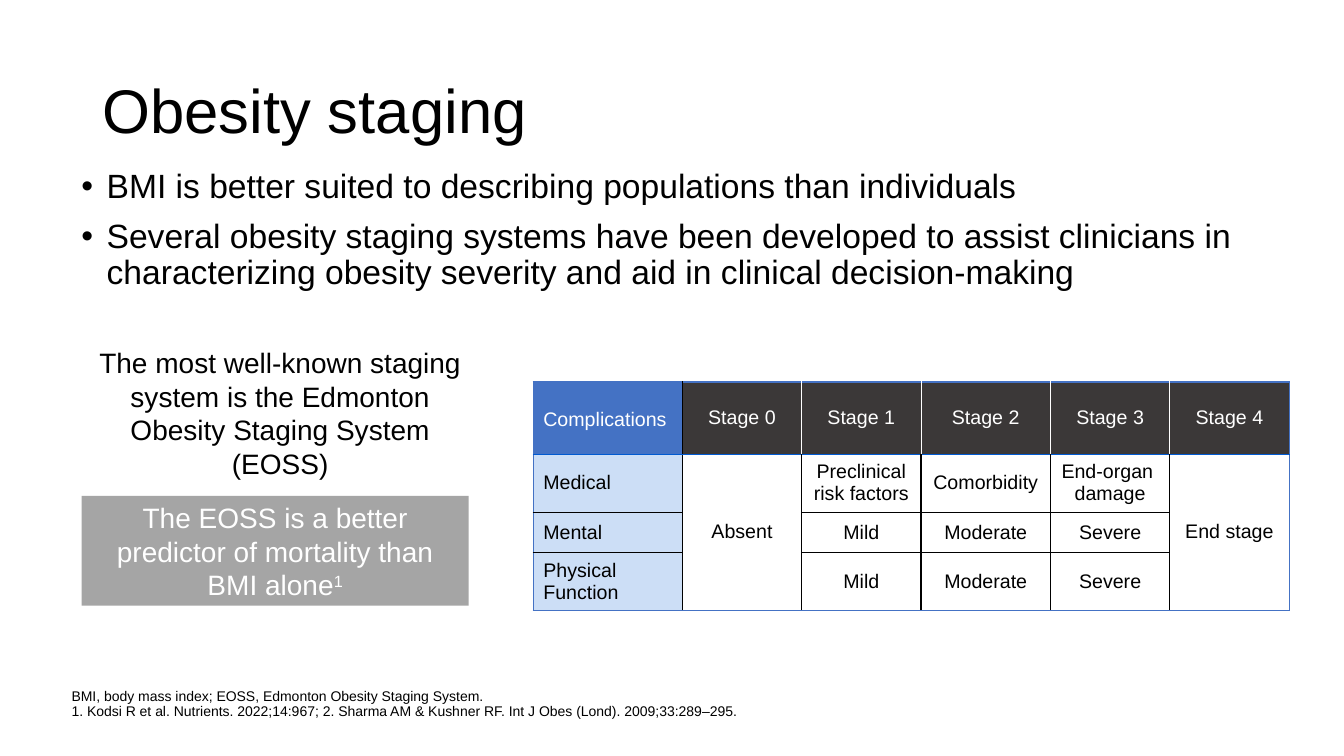
from pptx import Presentation
from pptx.dml.color import RGBColor
from pptx.enum import shapes, text
from pptx.oxml import ns, xmlchemy as xml
from pptx.util import Pt

HUES = {
    "black": "000000", "white": "FFFFFF", "gray": "A5A5A5", "dark": "3B3838",
    "blue": "4472C4", "deep": "005AD2", "pale": "CCDEF6",
}
LEFT, MID = text.PP_ALIGN.LEFT, text.PP_ALIGN.CENTER
ANCHOR = text.MSO_ANCHOR

HEAD = ["Complications"] + [f"Stage {n}" for n in range(5)]
ROWS = [
    HEAD,
    ["Medical", "Absent", "Preclinical risk factors", "Comorbidity",
     "End-organ \ndamage", "End stage"],
    ["Mental", "", "Mild", "Moderate", "Severe", ""],
    ["Physical Function", "", "Mild", "Moderate", "Severe", ""],
]
WIDTHS = [106.5, 85.25, 85.25, 92.5, 85.25, 85.25]
HEIGHTS = [51.5, 41.5, 29, 41]
SPANS = (1, 5)


def hue(name):
    return RGBColor.from_string(HUES[name])


def add_run(para, words, size, color="black", rise=0):
    for i, line in enumerate(words.split("\n")):
        if i:
            para.add_line_break()
        run = para.add_run()
        run.text = line
        font = run.font
        font.name, font.size, font.bold = "Arial", Pt(size), False
        font.color.rgb = hue(color)
        if rise:
            run._r.get_or_add_rPr().set("baseline", str(rise * 1000))


def set_frame(frame, anchor, inset=(7.2, 3.6)):
    frame.word_wrap = True
    frame.vertical_anchor = anchor
    frame.margin_left = frame.margin_right = Pt(inset[0])
    frame.margin_top = frame.margin_bottom = Pt(inset[1])


def add_text(slide, box, lines, size, anchor=ANCHOR.TOP, align=LEFT,
             lead=None, gap=0, inset=(7.2, 3.6), bullet=False):
    frame = slide.shapes.add_textbox(*map(Pt, box)).text_frame
    set_frame(frame, anchor, inset)
    for i, line in enumerate(lines):
        para = frame.paragraphs[0] if i == 0 else frame.add_paragraph()
        para.alignment = align
        para.line_spacing = lead
        para.space_before = Pt(gap)
        if bullet:
            add_mark(para)
        add_run(para, line, size)


def add_mark(para):
    props = para._p.get_or_add_pPr()
    props.set("marL", str(Pt(18)))
    props.set("indent", str(-Pt(18)))
    for tag, key, val in (("a:buFont", "typeface", "Arial"), ("a:buChar", "char", "•")):
        mark = xml.OxmlElement(tag)
        mark.set(key, val)
        props.append(mark)


def add_banner(slide, box, words, note):
    shape = slide.shapes.add_shape(shapes.MSO_SHAPE.RECTANGLE, *map(Pt, box))
    shape.shadow.inherit = False
    shape.fill.solid()
    shape.fill.fore_color.rgb = hue("gray")
    shape.line.fill.background()
    set_frame(shape.text_frame, ANCHOR.MIDDLE, (14.4, 7.2))
    para = shape.text_frame.paragraphs[0]
    para.alignment = MID
    add_run(para, words, 20, "white")
    add_run(para, note, 20, "white", 30)


def add_edge(cell, side, color, width):
    props = cell._tc.get_or_add_tcPr()
    line = xml.OxmlElement(f"a:ln{side}")
    line.set("w", str(Pt(width)))
    fill = xml.OxmlElement("a:solidFill")
    tint = xml.OxmlElement("a:srgbClr")
    tint.set("val", HUES[color])
    fill.append(tint)
    line.append(fill)
    props.append(line)


def pick_edges(row, col):
    last, end = len(ROWS) - 1, len(HEAD) - 1
    black, blue = ("black", 1), ("blue", 1)
    inner = ("white", 0.59) if row == 0 else black
    first = black if col == 1 else inner
    edges = {
        "L": blue if col == 0 else first,
        "R": blue if col == end else black if col == 0 else inner,
        "T": blue if row == 0 else ("deep", 1) if row == 1 else black,
        "B": ("deep", 1) if row == 0 else blue if row == last else black,
    }
    if col in SPANS and row == 1:
        edges["B"] = blue
    if col in SPANS and row > 1:
        del edges["T"]
        if row < last:
            del edges["B"]
    return edges


def fill_cell(cell, row, col, words):
    for side, (color, width) in pick_edges(row, col).items():
        add_edge(cell, side, color, width)
    back = "white"
    if row == 0:
        back = "dark" if col else "blue"
    elif col == 0:
        back = "pale"
    cell.fill.solid()
    cell.fill.fore_color.rgb = hue(back)
    cell.vertical_anchor = ANCHOR.MIDDLE
    if row == col == 0:
        cell.margin_top = Pt(6.5)
    if words:
        para = cell.text_frame.paragraphs[0]
        para.alignment = MID if col else LEFT
        add_run(para, words, 14, "black" if row else "white")


def add_stages(slide, left, top):
    box = (left, top, sum(WIDTHS), sum(HEIGHTS))
    table = slide.shapes.add_table(len(ROWS), len(HEAD), *map(Pt, box)).table
    table.first_row = table.horz_banding = False
    for col, width in zip(table.columns, WIDTHS):
        col.width = Pt(width)
    for row, height in zip(table.rows, HEIGHTS):
        row.height = Pt(height)
    for col in SPANS:
        table.cell(1, col).merge(table.cell(3, col))
    for r, row in enumerate(ROWS):
        for c, words in enumerate(row):
            fill_cell(table.cell(r, c), r, c, words)


def main():
    deck = Presentation()
    deck.slide_width, deck.slide_height = Pt(960), Pt(540)
    slide = deck.slides.add_slide(deck.slide_layouts[6])
    add_text(slide, (66, 28.8, 828, 104.4), ["Obesity staging"], 44,
             ANCHOR.MIDDLE, lead=0.9)
    add_text(slide, (51.1, 488.9, 843, 25.2), [
        "BMI, body mass index; EOSS, Edmonton Obesity Staging System.\n"
        "1. Kodsi R et al. Nutrients. 2022;14:967; 2. Sharma AM & Kushner RF. "
        "Int J Obes (Lond). 2009;33:289–295."],
        10, ANCHOR.BOTTOM, lead=0.9, gap=10, inset=(0, 0))
    add_text(slide, (51.1, 117.4, 858.2, 102.2), [
        "BMI is better suited to describing populations than individuals",
        "Several obesity staging systems have been developed to assist clinicians "
        "in characterizing obesity severity and aid in clinical decision-making"],
        24, lead=0.9, gap=10, bullet=True)
    add_banner(slide, (58.3, 354.2, 276.5, 78.5),
               "The EOSS is a better predictor of mortality than BMI alone", "1")
    add_text(slide, (51.1, 242.6, 298, 104.4), [
        "The most well-known staging system is the Edmonton Obesity Staging "
        "System (EOSS)"], 20, ANCHOR.MIDDLE, MID)
    add_stages(slide, 380.9, 272.9)
    deck.save("out.pptx")


if __name__ == "__main__":
    main()
